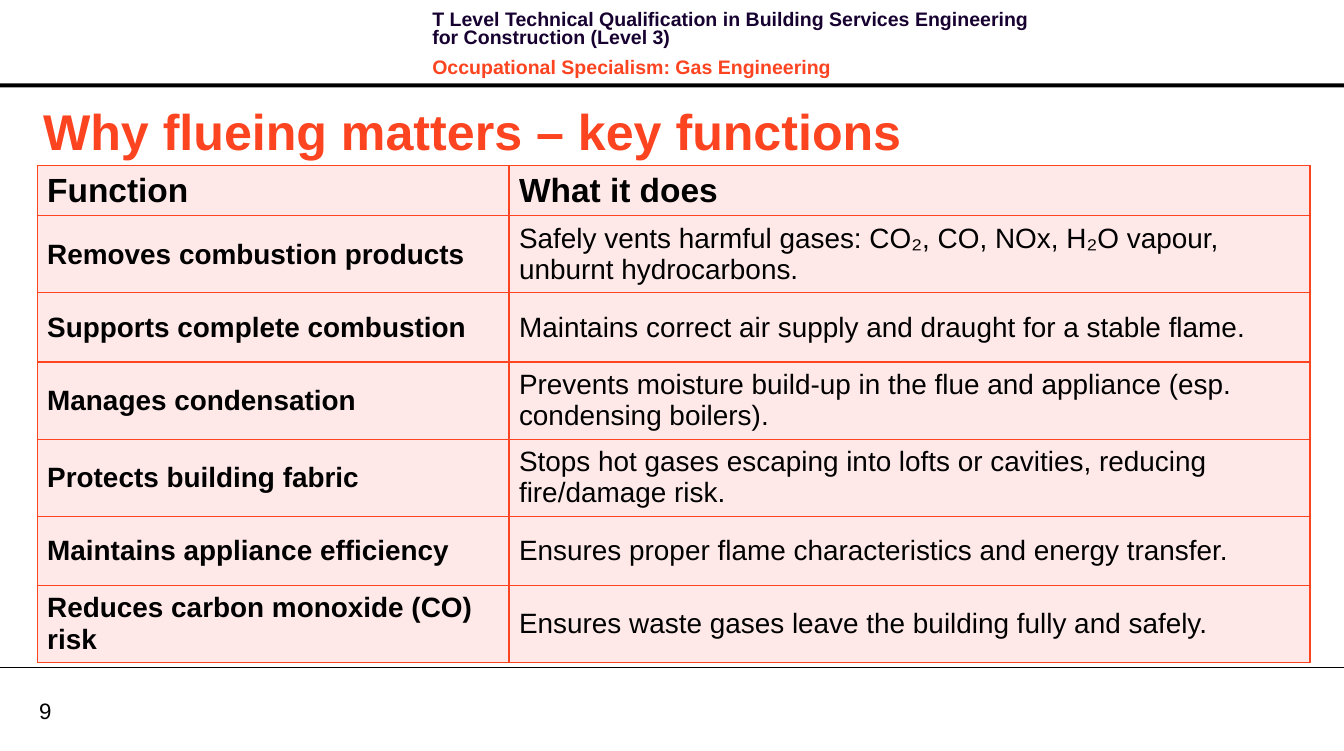
"""Build the slide on the key functions of flueing."""
from lxml import etree
from pptx import Presentation, util as u
from pptx.dml.color import RGBColor
from pptx.enum import shapes, text
from pptx.oxml import parse_xml
from pptx.oxml.ns import nsdecls, qn

COLORS = {"black": "000000", "navy": "170130", "orange": "FC4421", "pink": "FEE9E8"}
FUNCTIONS = [
    ("Function", "What it does"),
    ("Removes combustion products",
     "Safely vents harmful gases: CO₂, CO, NOx, H₂O vapour, unburnt hydrocarbons."),
    ("Supports complete combustion",
     "Maintains correct air supply and draught for a stable flame."),
    ("Manages condensation",
     "Prevents moisture build-up in the flue and appliance (esp. condensing boilers)."),
    ("Protects building fabric",
     "Stops hot gases escaping into lofts or cavities, reducing fire/damage risk."),
    ("Maintains appliance efficiency",
     "Ensures proper flame characteristics and energy transfer."),
    ("Reduces carbon monoxide (CO) risk",
     "Ensures waste gases leave the building fully and safely."),
]


def add_words(para, words, size, color="black", bold=False):
    span = para.add_run()
    span.text = words
    for name, value in {"name": "Arial", "size": u.Pt(size), "bold": bold}.items():
        setattr(span.font, name, value)
    span.font.color.rgb = RGBColor.from_string(COLORS[color])


def add_box(left, top, width, height, **frame_format):
    box = page.shapes.add_textbox(u.Cm(left), u.Cm(top), u.Cm(width), u.Cm(height))
    frame = box.text_frame
    for name, value in {"word_wrap": True, **frame_format}.items():
        setattr(frame, name, value)
    return frame


deck = Presentation()
deck.slide_width, deck.slide_height = u.Cm(34.01), u.Cm(19)
page = deck.slides.add_slide(deck.slide_layouts[6])

header_bar = page.shapes.add_shape(
    shapes.MSO_SHAPE.RECTANGLE, 0, u.Cm(2.11), deck.slide_width, u.Cm(0.1))
header_bar.shadow.inherit = False
header_bar.fill.solid()
header_bar.fill.fore_color.rgb = RGBColor.from_string(COLORS["black"])
header_bar.line.fill.background()

footer_line = page.shapes.add_connector(
    shapes.MSO_CONNECTOR.STRAIGHT, 0, u.Cm(16.89), deck.slide_width, u.Cm(16.89))
footer_line.line.width = u.Pt(0.75)
footer_line.line.color.rgb = RGBColor.from_string(COLORS["black"])
etree.SubElement(footer_line._element.spPr, qn("a:effectLst"))

number = add_box(0.99, 17.63, 1.63, 0.69, margin_left=0, margin_top=0, margin_right=0,
                 margin_bottom=0, vertical_anchor=text.MSO_ANCHOR.MIDDLE)
add_words(number.paragraphs[0], "9", 16)

course = add_box(10.69, 0.18, 16.18, 1.63)
qualification, specialism = course.paragraphs[0], course.add_paragraph()
for para in (qualification, specialism):
    para.line_spacing = u.Pt(13.1)
    para.space_after = u.Pt(4)
specialism.space_before = u.Pt(4)
add_words(qualification, "T Level Technical Qualification in Building Services Engineering "
          "for Construction (Level 3)", 14, "navy", True)
add_words(specialism, "Occupational Specialism: Gas Engineering", 14, "orange", True)

title = add_box(0.84, 2.41, 32.31, 1.8, vertical_anchor=text.MSO_ANCHOR.MIDDLE)
add_words(title.paragraphs[0], "Why flueing matters – key functions", 36, "orange", True)

table = page.shapes.add_table(
    len(FUNCTIONS), 2, u.Cm(0.94), u.Cm(4.19), u.Cm(32.21), u.Cm(11.49)).table
for column, width in zip(table.columns, (11.94, 20.27)):
    column.width = u.Cm(width)
for r, entries in enumerate(FUNCTIONS):
    table.rows[r].height = u.Cm(1.75 if r else 0.99)
    for c, words in enumerate(entries):
        cell = table.cell(r, c)
        cell.vertical_anchor = text.MSO_ANCHOR.MIDDLE
        add_words(cell.text_frame.paragraphs[0], words, 20 if r else 24,
                  bold=r == 0 or c == 0)
        for side in "LRTB":
            cell._tc.get_or_add_tcPr().append(parse_xml(
                f'<a:ln{side} {nsdecls("a")} w="12700"><a:solidFill>'
                f'<a:srgbClr val="{COLORS["orange"]}"/></a:solidFill></a:ln{side}>'))
        cell.fill.solid()
        cell.fill.fore_color.rgb = RGBColor.from_string(COLORS["pink"])

deck.save("out.pptx")
